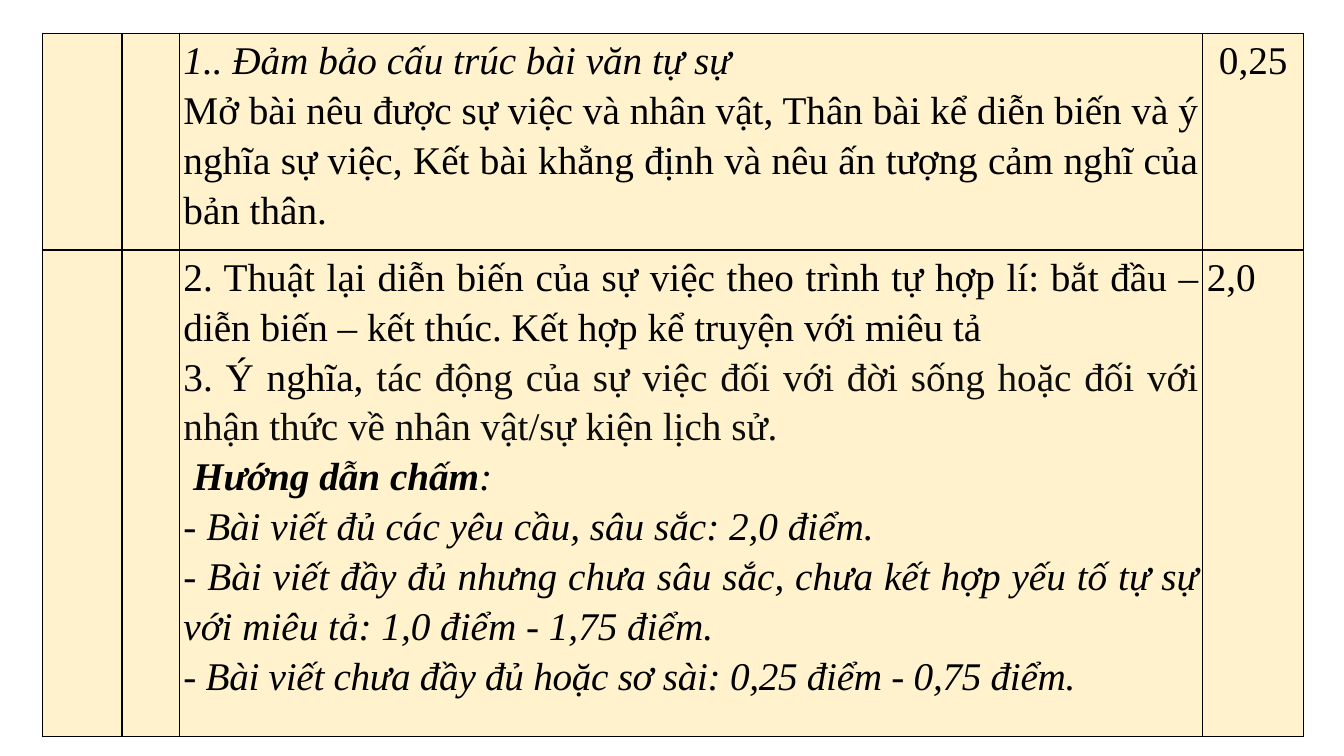
from dataclasses import dataclass

import pptx
import pptx.dml.color
import pptx.enum.text
import pptx.oxml
import pptx.oxml.ns
import pptx.util

Inches = pptx.util.Inches
Pt = pptx.util.Pt
RGB = pptx.dml.color.RGBColor
ALIGN = pptx.enum.text.PP_ALIGN


@dataclass(frozen=True)
class Theme:
    font: str = "Times New Roman"
    size: int = 28
    line_spacing: float = 1.15
    border_width: float = 1
    ink: str = "000000"
    soft_ink: str = "0D0D0D"
    cream: str = "FFF2CC"
    paper: str = "FFFFFF"


theme = Theme()

COLUMN_WIDTHS = [0.79, 0.57, 10.15, 1]
ROW_HEIGHTS = [2.15, 4.83]

# A paragraph is (alignment, runs); a run is (text, style), where the style
# letters are b = bold, i = italic, s = soft ink, t = tight letter spacing.
structure = [
    (ALIGN.LEFT, [("1.. Đảm bảo cấu trúc bài văn tự sự", "i")]),
    (ALIGN.JUSTIFY, [("Mở bài nêu được sự việc và nhân vật, Thân bài kể diễn biến và ý "
                      "nghĩa sự việc, Kết bài khẳng định và nêu ấn tượng cảm nghĩ của "
                      "bản thân.", "")]),
]
content_and_marking = [
    (ALIGN.JUSTIFY, [("2. Thuật lại diễn biến của sự việc theo trình tự hợp lí: bắt đầu – "
                      "diễn biến – kết thúc. Kết hợp kể truyện với miêu tả", "")]),
    (ALIGN.JUSTIFY, [("3. Ý nghĩa, ", ""),
                     ("tác động của sự việc đối với đời sống hoặc đối với "
                      "nhận thức về nhân vật/sự kiện lịch sử.", "s")]),
    (ALIGN.JUSTIFY, [(" ", "b"), ("Hướng dẫn chấm", "bi"), (":", "i")]),
    (ALIGN.JUSTIFY, [("- Bài viết đủ các yêu cầu, sâu sắc: 2,0 điểm.", "i")]),
    (ALIGN.JUSTIFY, [("- Bài viết đầy đủ nhưng chưa sâu sắc, chưa kết hợp yếu tố tự sự "
                      "với miêu tả: 1,0 điểm - 1,75 điểm.", "i")]),
    (ALIGN.JUSTIFY, [("- Bài viết chưa đầy đủ hoặc sơ sài: 0,25 điểm - 0,75 điểm.", "it")]),
]
rubric_rows = [
    [[], [], structure, [(ALIGN.CENTER, [("0,25", "")])]],
    [[], [], content_and_marking, [(ALIGN.LEFT, [("2,0", "")])]],
]


def write_paragraphs(cell, paragraphs):
    for index, (alignment, runs) in enumerate(paragraphs):
        paragraph = cell.text_frame.paragraphs[0] if index == 0 else cell.text_frame.add_paragraph()
        paragraph.alignment = alignment
        paragraph.line_spacing = theme.line_spacing
        for text, style in runs:
            run = paragraph.add_run()
            run.text = text
            run.font.name = theme.font
            run.font.size = Pt(theme.size)
            run.font.bold = "b" in style
            run.font.italic = "i" in style
            run.font.color.rgb = RGB.from_string(theme.soft_ink if "s" in style else theme.ink)
            if "t" in style:
                run.font._element.set("spc", "-20")


def fill_and_border(cell):
    cell.fill.solid()
    cell.fill.fore_color.rgb = RGB.from_string(theme.cream)
    # The schema wants the four sides ahead of the fill.
    for position, side in enumerate(["lnL", "lnR", "lnT", "lnB"]):
        border = pptx.oxml.parse_xml(
            f'<a:{side} {pptx.oxml.ns.nsdecls("a")} w="{Pt(theme.border_width)}">'
            f'<a:solidFill><a:srgbClr val="{theme.ink}"/></a:solidFill></a:{side}>')
        cell._tc.get_or_add_tcPr().insert(position, border)


presentation = pptx.Presentation()
presentation.slide_width = Inches(13.33)
presentation.slide_height = Inches(7.5)
slide = presentation.slides.add_slide(presentation.slide_layouts[6])
slide.background.fill.solid()
slide.background.fill.fore_color.rgb = RGB.from_string(theme.paper)

rubric = slide.shapes.add_table(
    len(ROW_HEIGHTS), len(COLUMN_WIDTHS), Inches(0.42), Inches(0.33),
    Inches(sum(COLUMN_WIDTHS)), Inches(sum(ROW_HEIGHTS))).table
rubric.first_row = False
rubric.horz_banding = False
for column, width in zip(rubric.columns, COLUMN_WIDTHS):
    column.width = Inches(width)
for row, height, contents in zip(rubric.rows, ROW_HEIGHTS, rubric_rows):
    row.height = Inches(height)
    for cell, paragraphs in zip(row.cells, contents):
        cell.margin_left = cell.margin_right = Inches(0.04)
        cell.margin_top = cell.margin_bottom = 0
        write_paragraphs(cell, paragraphs)
        fill_and_border(cell)

presentation.save("out.pptx")
